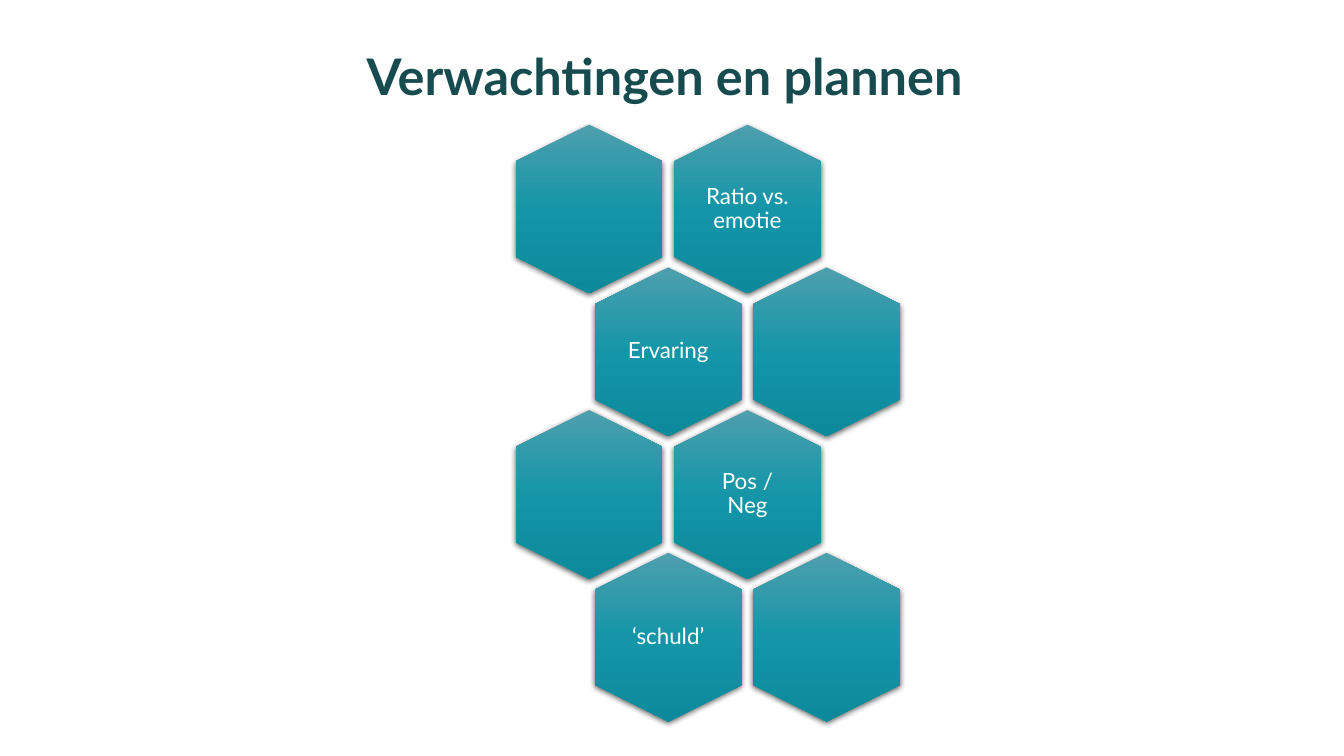
from dataclasses import dataclass

from lxml import etree
from pptx import Presentation
from pptx.dml.color import RGBColor
from pptx.enum.shapes import MSO_SHAPE as Preset
from pptx.enum.text import MSO_ANCHOR as Anchor, PP_ALIGN as Align
from pptx.oxml import parse_xml
from pptx.oxml.ns import nsdecls, qn
from pptx.util import Pt


@dataclass(frozen=True)
class Theme:
    font: str = "Lato"
    title_color: str = "164B4F"
    label_color: str = "FFFFFF"
    background: str = "FFFFFF"
    shadow_color: str = "000000"
    gradient: tuple = ((0, "4E9FAD"), (50, "1496A8"), (100, "0C8A9B"))
    title_size: int = 36
    label_size: int = 16
    line_spacing: float = 0.9


class HoneycombSlide:
    def __init__(self, presentation, theme):
        self.theme = theme
        self.slide = presentation.slides.add_slide(presentation.slide_layouts[6])
        fill = self.slide.background.fill
        fill.solid()
        fill.fore_color.rgb = RGBColor.from_string(theme.background)

    def text(self, words, left, top, width, height, size, color,
             align=Align.LEFT, anchor=Anchor.MIDDLE, bold=False, inset=None):
        box = self.slide.shapes.add_textbox(Pt(left), Pt(top), Pt(width), Pt(height))
        frame = box.text_frame
        frame.word_wrap = True
        frame.vertical_anchor = anchor
        if inset is not None:
            frame.margin_left = frame.margin_right = Pt(inset)
            frame.margin_top = frame.margin_bottom = Pt(inset)
        paragraph = frame.paragraphs[0]
        paragraph.alignment = align
        paragraph.line_spacing = self.theme.line_spacing
        run = paragraph.add_run()
        run.text = words
        run.font.name = self.theme.font
        run.font.size = Pt(size)
        run.font.bold = bold
        run.font.color.rgb = RGBColor.from_string(color)

    def title(self, words):
        self.text(words, 254.9, 28.8, 450.7, 51.1, self.theme.title_size,
                  self.theme.title_color, anchor=Anchor.BOTTOM, bold=True)

    def hexagon(self, center_x, center_y, length=120.5, breadth=104.8):
        """Draw a hexagon that stands on its point."""
        shape = self.slide.shapes.add_shape(
            Preset.HEXAGON, Pt(center_x - length / 2), Pt(center_y - breadth / 2),
            Pt(length), Pt(breadth))
        shape.rotation = 90
        shape.adjustments[0] = 0.25
        shape.line.fill.background()
        self.shade(shape)

    def shade(self, shape):
        """Give the shape an upright gradient and a soft shadow below."""
        shape.shadow.inherit = False
        stops = "".join(
            f'<a:gs pos="{position * 1000}"><a:srgbClr val="{color}"/></a:gs>'
            for position, color in self.theme.gradient)
        properties = shape.element.spPr
        properties.find(qn("a:prstGeom")).addnext(parse_xml(
            f'<a:gradFill {nsdecls("a")} rotWithShape="0"><a:gsLst>{stops}</a:gsLst>'
            '<a:lin ang="5400000" scaled="0"/></a:gradFill>'))
        shadow = etree.SubElement(
            properties.find(qn("a:effectLst")), qn("a:outerShdw"),
            blurRad=str(Pt(4.5)), dist=str(Pt(1.5)), dir="5400000",
            algn="ctr", rotWithShape="0")
        color = etree.SubElement(shadow, qn("a:srgbClr"), val=self.theme.shadow_color)
        etree.SubElement(color, qn("a:alpha"), val="63000")

    def label(self, words, center_x, center_y, width=72, height=82.8):
        self.text(words, center_x - width / 2, center_y - height / 2, width, height,
                  self.theme.label_size, self.theme.label_color,
                  align=Align.CENTER, inset=5)


def main():
    presentation = Presentation()
    presentation.slide_width = Pt(960)
    presentation.slide_height = Pt(540)

    page = HoneycombSlide(presentation, Theme())
    page.title("Verwachtingen en plannen")

    first_x, first_y = 420.8, 149.3
    column_step, row_step = 113.1, 101.95
    rows = (("", "Ratio vs. emotie"), ("Ervaring", ""),
            ("", "Pos / Neg"), ("‘schuld’", ""))
    for row, labels in enumerate(rows):
        for column, words in enumerate(labels):
            center_x = first_x + (column + row % 2 / 2) * column_step
            center_y = first_y + row * row_step
            page.hexagon(center_x, center_y)
            if words:
                page.label(words, center_x, center_y)

    presentation.save("out.pptx")


if __name__ == "__main__":
    main()
